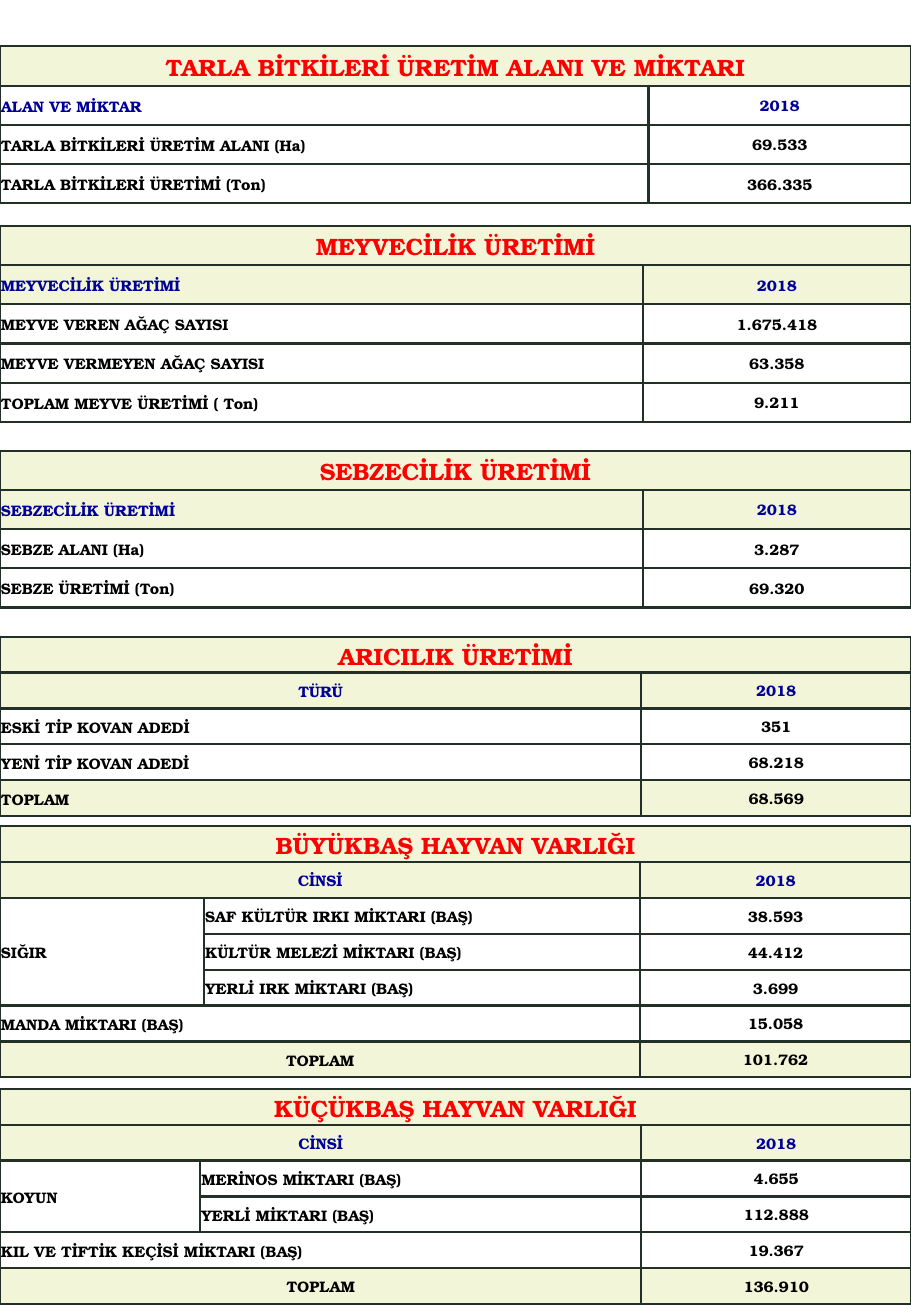
from lxml import etree
from pptx import Presentation
from pptx.dml.color import RGBColor
from pptx.enum.text import MSO_ANCHOR, PP_ALIGN
from pptx.oxml.ns import qn
from pptx.util import Cm, Pt

LEFT = PP_ALIGN.LEFT
CENTER = PP_ALIGN.CENTER
MIDDLE = MSO_ANCHOR.MIDDLE

PAGE_WIDTH, PAGE_HEIGHT = 19.05, 27.51
TALL_ROW, SHORT_ROW = 0.82, 0.75
FROM_LEFT, FROM_ABOVE = "<", "^"

COLORS = {
    "title": "FF0000",
    "heading": "000099",
    "text": "000000",
    "cream": "F2F5D8",
    "white": "FFFFFF",
    "border": "223028",
}

ROW_STYLES = {
    "title": (14, "title", "cream", CENTER),
    "plain heading": (9, "heading", "white", LEFT),
    "heading": (9, "heading", "cream", LEFT),
    "centred heading": (9, "heading", "cream", CENTER),
    "item": (9, "text", "white", LEFT),
    "total": (9, "text", "cream", LEFT),
    "centred total": (9, "text", "cream", CENTER),
}

SECTIONS = [
    (0.97, TALL_ROW, [13.56], "TARLA BİTKİLERİ ÜRETİM ALANI VE MİKTARI", [
        ("plain heading", "ALAN VE MİKTAR", "2018"),
        ("item", "TARLA BİTKİLERİ ÜRETİM ALANI (Ha)", "69.533"),
        ("item", "TARLA BİTKİLERİ ÜRETİMİ (Ton)", "366.335"),
    ]),
    (4.72, TALL_ROW, [13.44], "MEYVECİLİK ÜRETİMİ", [
        ("heading", "MEYVECİLİK ÜRETİMİ", "2018"),
        ("item", "MEYVE VEREN AĞAÇ SAYISI", "1.675.418"),
        ("item", "MEYVE VERMEYEN AĞAÇ SAYISI", "63.358"),
        ("item", "TOPLAM MEYVE ÜRETİMİ ( Ton)", "9.211"),
    ]),
    (9.42, TALL_ROW, [13.44], "SEBZECİLİK ÜRETİMİ", [
        ("heading", "SEBZECİLİK ÜRETİMİ", "2018"),
        ("item", "SEBZE ALANI (Ha)", "3.287"),
        ("item", "SEBZE ÜRETİMİ (Ton)", "69.320"),
    ]),
    (13.31, SHORT_ROW, [13.41], "ARICILIK ÜRETİMİ", [
        ("centred heading", "TÜRÜ", "2018"),
        ("item", "ESKİ TİP KOVAN ADEDİ", "351"),
        ("item", "YENİ TİP KOVAN ADEDİ", "68.218"),
        ("total", "TOPLAM", "68.569"),
    ]),
    (17.27, SHORT_ROW, [4.27, 9.12], "BÜYÜKBAŞ HAYVAN VARLIĞI", [
        ("centred heading", "CİNSİ", FROM_LEFT, "2018"),
        ("item", "SIĞIR", "SAF KÜLTÜR IRKI MİKTARI (BAŞ)", "38.593"),
        ("item", FROM_ABOVE, "KÜLTÜR MELEZİ MİKTARI (BAŞ)", "44.412"),
        ("item", FROM_ABOVE, "YERLİ IRK MİKTARI (BAŞ)", "3.699"),
        ("item", "MANDA MİKTARI (BAŞ)", FROM_LEFT, "15.058"),
        ("centred total", "TOPLAM", FROM_LEFT, "101.762"),
    ]),
    (22.76, SHORT_ROW, [4.19, 9.22], "KÜÇÜKBAŞ HAYVAN VARLIĞI", [
        ("centred heading", "CİNSİ", FROM_LEFT, "2018"),
        ("item", "KOYUN", "MERİNOS MİKTARI (BAŞ)", "4.655"),
        ("item", FROM_ABOVE, "YERLİ MİKTARI (BAŞ)", "112.888"),
        ("item", "KIL VE TİFTİK KEÇİSİ MİKTARI (BAŞ)", FROM_LEFT, "19.367"),
        ("centred total", "TOPLAM", FROM_LEFT, "136.910"),
    ]),
]


class StatisticsPage:
    font_name = "TeX Gyre Bonum"
    border_width = Pt(1.5)

    def __init__(self, slide):
        self.slide = slide

    def add_section(self, top, row_height, label_widths, title, records):
        widths = label_widths + [PAGE_WIDTH - sum(label_widths)]
        title_row = ("title", title) + (FROM_LEFT,) * len(label_widths)
        rows = [title_row] + records
        table = self.slide.shapes.add_table(
            len(rows), len(widths), 0, Cm(top),
            Cm(PAGE_WIDTH), Cm(row_height * len(rows))).table
        table.first_row = table.horz_banding = False
        for column, width in zip(table.columns, widths):
            column.width = Cm(width)
        self.merge_cells(table, rows)
        for r, (style, *entries) in enumerate(rows):
            table.rows[r].height = Cm(row_height)
            for c, entry in enumerate(entries):
                is_value = c == len(entries) - 1
                self.fill_cell(table.cell(r, c), entry, style, is_value)

    def merge_cells(self, table, rows):
        ends = {}
        for r, (_, *entries) in enumerate(rows):
            for c, entry in enumerate(entries):
                if entry == FROM_LEFT:
                    start = (r, start[1])
                    ends[start] = (r, c)
                elif entry == FROM_ABOVE:
                    ends[group] = (r, c)
                else:
                    start = (r, c)
                    if c == 0:
                        group = start
        for start, end in ends.items():
            table.cell(*start).merge(table.cell(*end))

    def fill_cell(self, cell, entry, style, is_value):
        size, color, fill, alignment = ROW_STYLES[style]
        self.add_borders(cell)
        cell.fill.solid()
        cell.fill.fore_color.rgb = RGBColor.from_string(COLORS[fill])
        cell.vertical_anchor = MIDDLE
        cell.margin_left = cell.margin_right = Cm(0.15 if is_value else 0.02)
        cell.margin_top = Cm(0 if is_value else 0.02)
        cell.margin_bottom = 0
        if entry in (FROM_LEFT, FROM_ABOVE):
            return
        cell.text_frame.text = entry
        paragraph = cell.text_frame.paragraphs[0]
        paragraph.alignment = CENTER if is_value else alignment
        font = paragraph.runs[0].font
        font.name = self.font_name
        font.size = Pt(size)
        font.bold = True
        font.color.rgb = RGBColor.from_string(COLORS[color])

    def add_borders(self, cell):
        properties = cell._tc.get_or_add_tcPr()
        for side in ("a:lnL", "a:lnR", "a:lnT", "a:lnB"):
            line = etree.SubElement(properties, qn(side), w=str(self.border_width))
            solid = etree.SubElement(line, qn("a:solidFill"))
            etree.SubElement(solid, qn("a:srgbClr"), val=COLORS["border"])


def main():
    presentation = Presentation()
    presentation.slide_width = Cm(PAGE_WIDTH)
    presentation.slide_height = Cm(PAGE_HEIGHT)
    page = StatisticsPage(presentation.slides.add_slide(presentation.slide_layouts[6]))
    for section in SECTIONS:
        page.add_section(*section)
    presentation.save("out.pptx")


if __name__ == "__main__":
    main()
